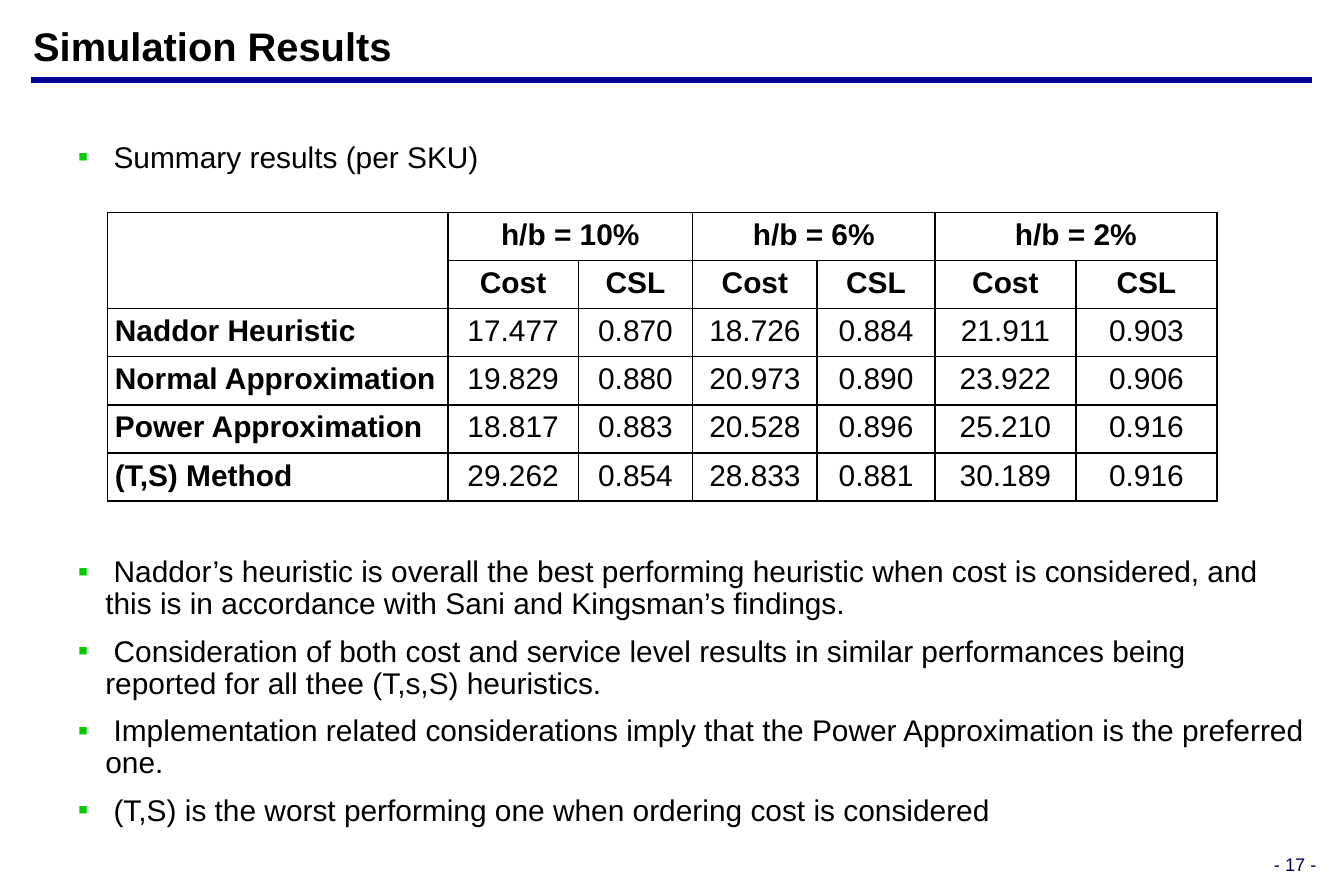
import pptx
import pptx.util
import pptx.dml.color
import pptx.enum.shapes
import pptx.enum.text
import pptx.oxml
import pptx.oxml.ns

Pt = pptx.util.Pt
ALIGN = pptx.enum.text.PP_ALIGN
ANCHOR = pptx.enum.text.MSO_ANCHOR
NAMESPACE = pptx.oxml.ns.nsdecls("a")
BLACK = "000000"

GROUPS = ["h/b = 10%", "h/b = 6%", "h/b = 2%"]
RESULTS = [
    ["Naddor Heuristic", "17.477", "0.870", "18.726", "0.884", "21.911", "0.903"],
    ["Normal Approximation", "19.829", "0.880", "20.973", "0.890", "23.922", "0.906"],
    ["Power Approximation", "18.817", "0.883", "20.528", "0.896", "25.210", "0.916"],
    ["(T,S) Method", "29.262", "0.854", "28.833", "0.881", "30.189", "0.916"],
]
COLUMN_WIDTHS = [205.2, 78.5, 69, 75, 71, 85, 85]
ROW_HEIGHT = 29
FINDINGS = [
    " Naddor’s heuristic is overall the best performing heuristic when cost is considered, "
    "and this is in accordance with Sani and Kingsman’s findings.",
    " Consideration of both cost and service level results in similar performances being "
    "reported for all thee (T,s,S) heuristics.",
    " Implementation related considerations imply that the Power Approximation is the "
    "preferred one.",
    " (T,S) is the worst performing one when ordering cost is considered",
]


def colour(hex_string):
    return pptx.dml.color.RGBColor.from_string(hex_string)


def write(para, text, size, hex_string=BLACK, bold=False, align=ALIGN.LEFT):
    para.text = text
    para.alignment = align
    for span in para.runs:
        span.font.name = "Arial"
        span.font.size = Pt(size)
        span.font.bold = bold
        span.font.color.rgb = colour(hex_string)


def set_margins(target, across, down):
    target.margin_left = target.margin_right = Pt(across)
    target.margin_top = target.margin_bottom = Pt(down)


def add_text_frame(page, box, across, down, anchor=ANCHOR.TOP):
    frame = page.shapes.add_textbox(*map(Pt, box)).text_frame
    frame.word_wrap = True
    frame.vertical_anchor = anchor
    set_margins(frame, across, down)
    return frame


def add_heading(page, box):
    """Place the title, with the rule just below it."""
    left, top, width, height = box
    frame = add_text_frame(page, box, 0, 0, ANCHOR.BOTTOM)
    write(frame.paragraphs[0], "Simulation Results", 24, bold=True)
    rule_y = Pt(top + height + 6.5)
    rule = page.shapes.add_connector(
        pptx.enum.shapes.MSO_CONNECTOR.STRAIGHT,
        Pt(left - 1.2), rule_y, Pt(left + width + 3), rule_y)
    rule.line.color.rgb = colour("000099")
    rule.line.width = Pt(4)
    rule._element.spPr.append(pptx.oxml.parse_xml(f"<a:effectLst {NAMESPACE}/>"))


def add_bullets(page, box, texts, line_spacing, space_after=0):
    frame = add_text_frame(page, box, 4.5, 3.6)
    for index, text in enumerate(texts):
        para = frame.add_paragraph() if index else frame.paragraphs[0]
        write(para, text, 18)
        para.line_spacing = line_spacing
        para.space_before = Pt(9)
        para.space_after = Pt(space_after)
        properties = para._p.get_or_add_pPr()
        properties.set("marL", str(Pt(16.5)))
        properties.set("indent", str(-Pt(16.5)))
        for bullet in (f'<a:buClr {NAMESPACE}><a:srgbClr val="00CC00"/></a:buClr>',
                       f'<a:buFont {NAMESPACE} typeface="Arial"/>',
                       f'<a:buChar {NAMESPACE} char="▪"/>'):
            properties.append(pptx.oxml.parse_xml(bullet))


def style_cell(cell):
    """Give a cell thin black borders, no fill and the table's margins."""
    set_margins(cell, 4.5, 3.6)
    properties = cell._tc.get_or_add_tcPr()
    for side in "LRTB":
        properties.append(pptx.oxml.parse_xml(
            f'<a:ln{side} {NAMESPACE} w="{Pt(1)}"><a:solidFill>'
            f'<a:srgbClr val="{BLACK}"/></a:solidFill></a:ln{side}>'))
    cell.fill.background()


def add_results_table(page, left, top):
    group_row = [""] + [text for group in GROUPS for text in (group, "")]
    rows = [group_row, [""] + ["Cost", "CSL"] * len(GROUPS)] + RESULTS
    table = page.shapes.add_table(
        len(rows), len(COLUMN_WIDTHS), Pt(left), Pt(top),
        Pt(sum(COLUMN_WIDTHS)), Pt(ROW_HEIGHT * len(rows))).table
    table.first_row = table.horz_banding = False
    for column, width in zip(table.columns, COLUMN_WIDTHS):
        column.width = Pt(width)
    for row_index, texts in enumerate(rows):
        table.rows[row_index].height = Pt(ROW_HEIGHT)
        for column_index, text in enumerate(texts):
            cell = table.cell(row_index, column_index)
            style_cell(cell)
            if text:
                write(cell.text_frame.paragraphs[0], text, 18,
                      bold=row_index < 2 or column_index == 0,
                      align=ALIGN.CENTER if column_index else ALIGN.LEFT)
    table.cell(0, 0).merge(table.cell(1, 0))
    for first in range(1, len(COLUMN_WIDTHS), 2):
        table.cell(0, first).merge(table.cell(0, first + 1))


def add_page_number(page, box):
    frame = add_text_frame(page, box, 5, 2.2, ANCHOR.BOTTOM)
    write(frame.paragraphs[0], "- 17 -", 11, "000066", align=ALIGN.RIGHT)


def main():
    deck = pptx.Presentation()
    deck.slide_width, deck.slide_height = Pt(810), Pt(540)
    page = deck.slides.add_slide(deck.slide_layouts[6])
    add_page_number(page, (753, 512.6, 45.5, 17.3))
    add_heading(page, (20, 13, 768, 28.8))
    add_bullets(page, (42.5, 75.6, 737.3, 33), ["" + " Summary results (per SKU)"], 1.2, 7.2)
    add_results_table(page, 64.8, 128)
    add_bullets(page, (42.5, 332, 748, 176.4), FINDINGS, 0.9)
    deck.save("out.pptx")


if __name__ == "__main__":
    main()
